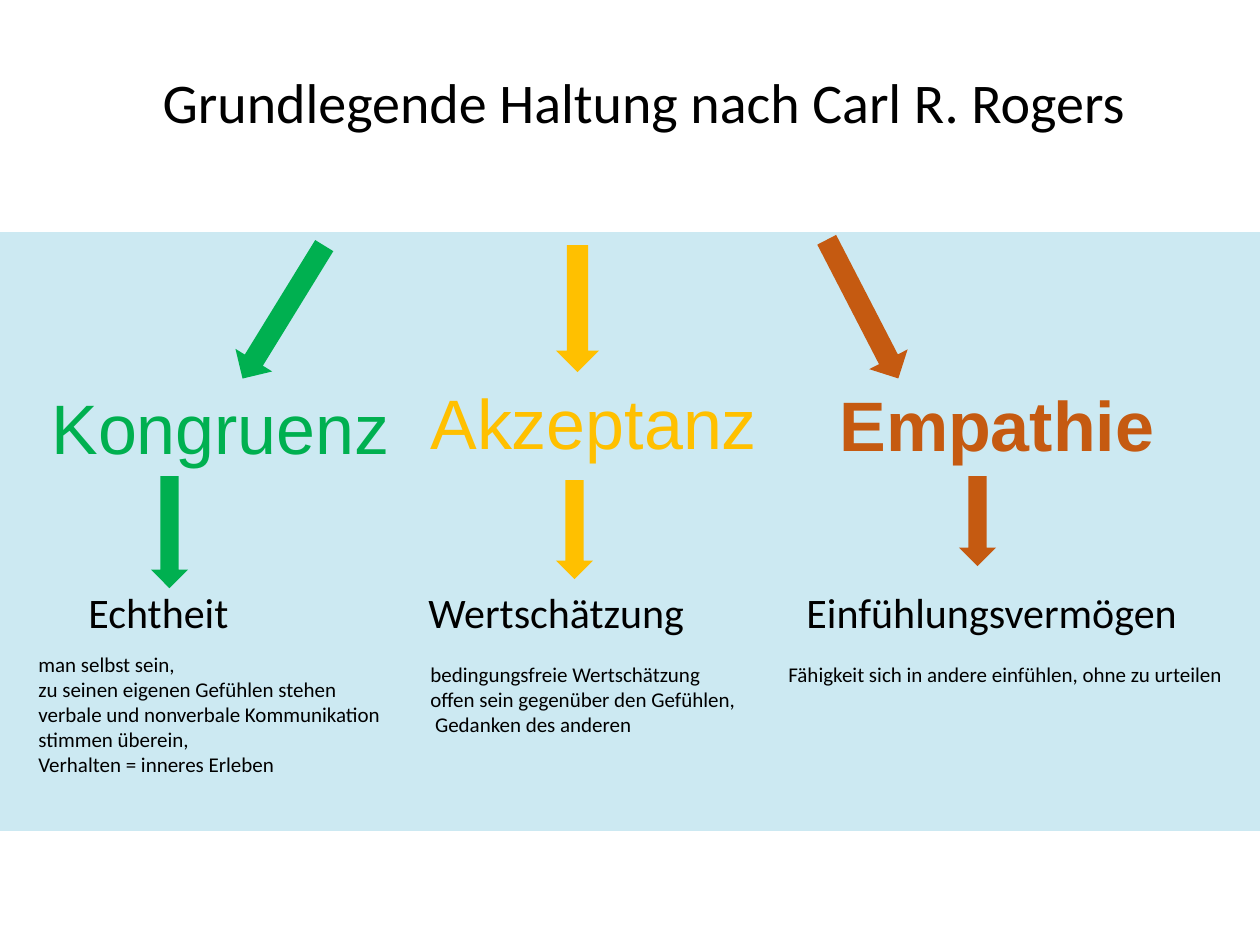
"""Build a slide on the three basic attitudes described by Carl R. Rogers."""
import pptx
import pptx.dml.color
import pptx.enum.shapes
import pptx.enum.text
import pptx.util
from lxml import etree

TITLE = "Grundlegende Haltung nach Carl R. Rogers"
ATTITUDES = [
    dict(name="Kongruenz", color="00B050", bold=False, spacing=0.9,
         at=(39, 388, 373, 110),
         arrows=[(264, 235, 39, 154, 31.6), (153, 477, 33, 110, 0)],
         meaning="Echtheit", meaning_left=76, note_at=(26, 645, 373, 140),
         notes=["man selbst sein,", "zu seinen eigenen Gefühlen stehen",
                "verbale und nonverbale Kommunikation", "stimmen überein,",
                "Verhalten = inneres Erleben"]),
    dict(name="Akzeptanz", color="FFC000", bold=False, spacing=1.0,
         at=(418, 373, 358, 97),
         arrows=[(558, 246, 39, 125, 0), (558, 481, 33, 97, 0)],
         meaning="Wertschätzung", meaning_left=416, note_at=(418, 655, 348, 89),
         notes=["bedingungsfreie Wertschätzung", "offen sein gegenüber den Gefühlen,",
                " Gedanken des anderen"]),
    dict(name="Empathie", color="C55A11", bold=True, spacing=1.0,
         at=(827, 375, 358, 97),
         arrows=[(843, 232, 39, 154, 332.7), (961, 477, 33, 88, 0)],
         meaning="Einfühlungsvermögen", meaning_left=794, note_at=(776, 655, 484, 38),
         notes=["Fähigkeit sich in andere einfühlen, ohne zu urteilen"]),
]
THEME = dict(band="CCE9F2", text="000000", body="Calibri", display="Arial",
             title=32, name=40, meaning=24, note=12)
WIDTH, HEIGHT = 1260, 945
BAND = (0, 232, WIDTH, 599)
TITLE_AT = (150, 69, 1091, 553)
MEANING_TOP, MEANING_WIDTH, MEANING_HEIGHT = 580, 407, 63


def px(n):
    return pptx.util.Emu(n * 914400 // 126)


def box(at):
    return [px(n) for n in at]


def rgb(value):
    return pptx.dml.color.RGBColor.from_string(value)


def add_shape(s, kind, at, color, rotation=0, line=None):
    sp = s.shapes.add_shape(kind, *box(at))
    sp.shadow.inherit = False
    sp.rotation = rotation
    sp.fill.solid()
    sp.fill.fore_color.rgb = rgb(color)
    if line:
        sp.line.color.rgb = rgb(color)
        sp.line.width = pptx.util.Pt(line)
        ns = "{http://schemas.openxmlformats.org/drawingml/2006/main}"
        etree.SubElement(sp.line._get_or_add_ln(), ns + "miter", lim="800000")
    else:
        sp.line.fill.background()


def write(tf, lines, size, font=THEME["body"], color=THEME["text"], bold=False,
          spacing=1.0):
    tf.word_wrap = True
    tf.auto_size = pptx.enum.text.MSO_AUTO_SIZE.NONE
    tf.vertical_anchor = pptx.enum.text.MSO_ANCHOR.TOP
    for i, line in enumerate(lines):
        p = tf.add_paragraph() if i else tf.paragraphs[0]
        p.alignment = pptx.enum.text.PP_ALIGN.LEFT
        p.line_spacing = spacing
        r = p.add_run()
        r.text = line
        r.font.name, r.font.size, r.font.bold = font, pptx.util.Pt(size), bold
        r.font.color.rgb = rgb(color)


def add_text(s, at, lines, size, **style):
    write(s.shapes.add_textbox(*box(at)).text_frame, lines, size, **style)


def main():
    prs = pptx.Presentation()
    prs.slide_width, prs.slide_height = px(WIDTH), px(HEIGHT)
    s = prs.slides.add_slide(prs.slide_layouts[5])
    shapes = pptx.enum.shapes.MSO_SHAPE

    add_shape(s, shapes.RECTANGLE, BAND, THEME["band"])
    title = s.shapes.title
    title.left, title.top, title.width, title.height = box(TITLE_AT)
    write(title.text_frame, [TITLE], THEME["title"], spacing=0.9)

    for a in ATTITUDES:
        add_text(s, a["at"], [a["name"]], THEME["name"], font=THEME["display"],
                 color=a["color"], bold=a["bold"], spacing=a["spacing"])
        for *at, rotation in a["arrows"]:
            add_shape(s, shapes.DOWN_ARROW, at, a["color"], rotation, line=1)
        meaning_at = (a["meaning_left"], MEANING_TOP, MEANING_WIDTH, MEANING_HEIGHT)
        add_text(s, meaning_at, [a["meaning"]], THEME["meaning"])
        add_text(s, a["note_at"], a["notes"], THEME["note"])

    prs.save("out.pptx")


if __name__ == "__main__":
    main()
